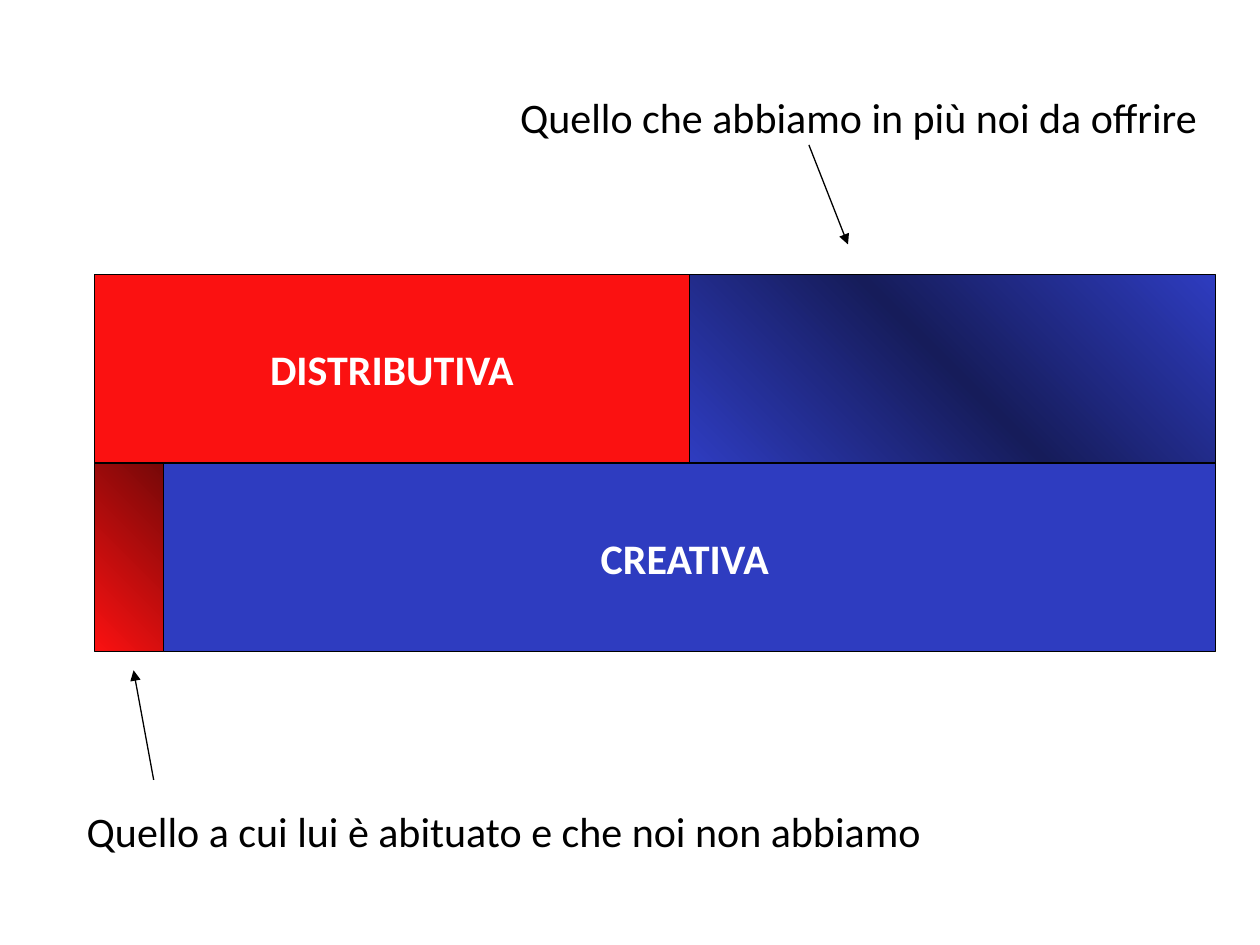
from copy import deepcopy
from dataclasses import dataclass

from pptx import Presentation
from pptx import util as u
from pptx.dml.color import RGBColor
from pptx.enum import shapes, text
from pptx.oxml import ns, xmlchemy


@dataclass(frozen=True)
class Theme:
    red: str = "FB1111"
    dark_red: str = "760808"
    blue: str = "2E3CC0"
    dark_blue: str = "161C5A"
    ink: str = "000000"
    paper: str = "FFFFFF"
    font: str = "Calibri"
    size: int = 24
    line: float = 0.75


THEME = Theme()


def rgb(value):
    return RGBColor.from_string(value)


def write(frame, words, color, bold=False):
    frame.word_wrap = False
    run = frame.paragraphs[0].add_run()
    run.text = words
    run.font.name = THEME.font
    run.font.size = u.Pt(THEME.size)
    run.font.bold = bold
    run.font.color.rgb = rgb(color)


def paint(fill, colors):
    if len(colors) == 1:
        fill.solid()
        fill.fore_color.rgb = rgb(colors[0])
        return
    fill.gradient()
    fill.gradient_angle = 45
    if len(colors) == 3:
        first = fill.gradient_stops[0]._gs
        first.addnext(deepcopy(first))
    for index, (stop, color) in enumerate(zip(fill.gradient_stops, colors)):
        stop.color.rgb = rgb(color)
        stop.position = index / (len(colors) - 1)


def add_block(slide, box, colors, title=None):
    block = slide.shapes.add_shape(
        shapes.MSO_SHAPE.RECTANGLE, *map(u.Inches, box))
    block.shadow.inherit = False
    paint(block.fill, colors)
    block.line.color.rgb = rgb(THEME.ink)
    block.line.width = u.Pt(THEME.line)
    if title:
        frame = block.text_frame
        frame.vertical_anchor = text.MSO_ANCHOR.MIDDLE
        write(frame, title, THEME.paper, bold=True)
        frame.paragraphs[0].alignment = text.PP_ALIGN.CENTER


def add_comparison(slide, left, top, width, height):
    row = height / 2
    middle, right = top + row, left + width
    distributive, habit, overlap = 4.72, 0.55, 0.08
    split = left + distributive
    creative = left + habit - overlap
    add_block(slide, (left, top, distributive, row), [THEME.red], "DISTRIBUTIVA")
    add_block(slide, (creative, middle, right - creative, row),
              [THEME.blue], "CREATIVA")
    add_block(slide, (left, middle, habit, row), [THEME.red, THEME.dark_red])
    add_block(slide, (split, top, right - split, row),
              [THEME.blue, THEME.dark_blue, THEME.blue])


def add_callout(slide, box, words, start, end):
    arrow = slide.shapes.add_connector(
        shapes.MSO_CONNECTOR.STRAIGHT, *map(u.Inches, start + end))
    arrow.line.color.rgb = rgb(THEME.ink)
    arrow.line.width = u.Pt(THEME.line)
    head = xmlchemy.OxmlElement("a:tailEnd")
    head.set("type", "triangle")
    arrow.line._get_or_add_ln().append(head)
    arrow._element.find(ns.qn("p:spPr")).append(
        xmlchemy.OxmlElement("a:effectLst"))
    label = slide.shapes.add_textbox(*map(u.Inches, box)).text_frame
    write(label, words, THEME.ink)
    label.auto_size = text.MSO_AUTO_SIZE.SHAPE_TO_FIT_TEXT


def main():
    deck = Presentation()
    deck.slide_width, deck.slide_height = u.Inches(10), u.Inches(7.5)
    slide = deck.slides.add_slide(deck.slide_layouts[6])
    add_comparison(slide, 0.75, 2.18, 8.9, 2.99)
    add_callout(slide, (0.59, 6.34, 6.9, 0.5),
                "Quello a cui lui è abituato e che noi non abbiamo",
                (1.22, 6.19), (1.06, 5.32))
    add_callout(slide, (4.03, 0.68, 5.63, 0.5),
                "Quello che abbiamo in più noi da offrire",
                (6.42, 1.15), (6.73, 1.94))
    deck.save("out.pptx")


if __name__ == "__main__":
    main()
